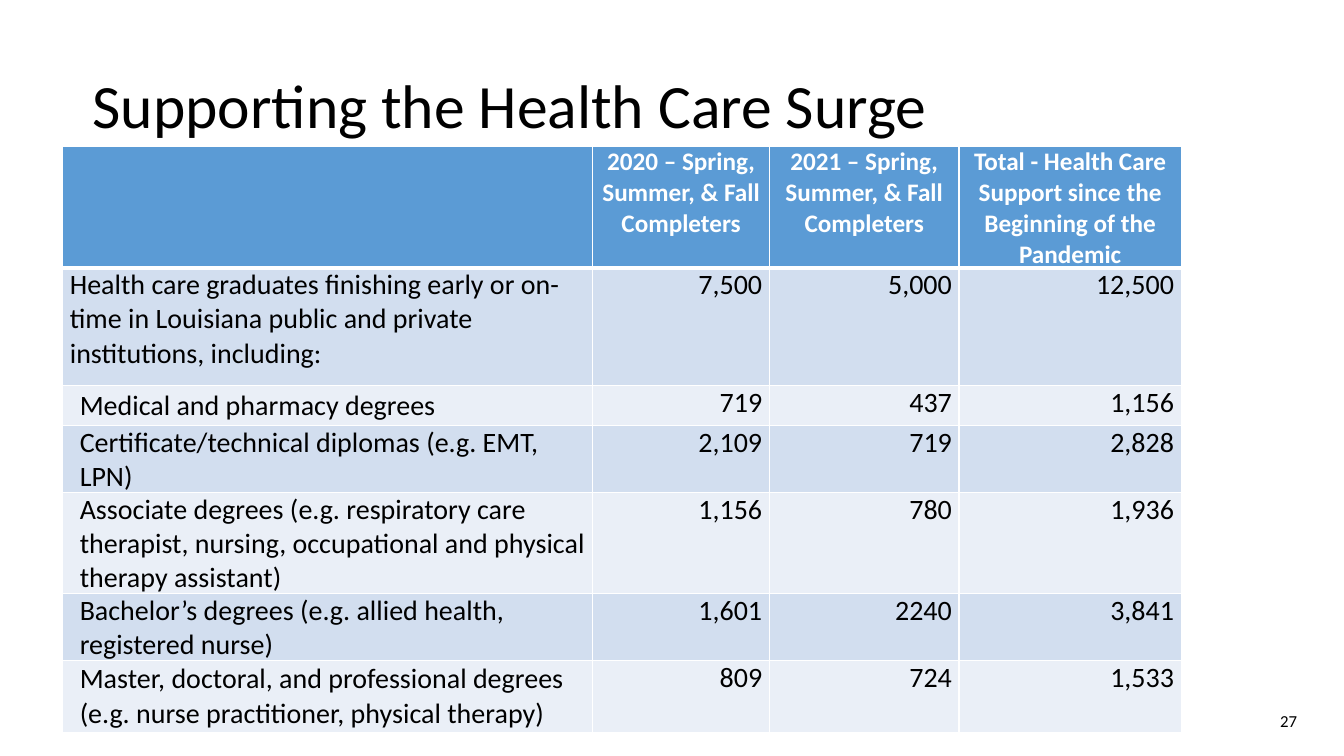
import pptx
import pptx.dml.color
import pptx.enum.text
import pptx.oxml
import pptx.oxml.ns
import pptx.util
from dataclasses import dataclass

Cm, Pt = pptx.util.Cm, pptx.util.Pt
ALIGN = pptx.enum.text.PP_ALIGN
ANCHOR = pptx.enum.text.MSO_ANCHOR


@dataclass(frozen=True)
class Theme:
    font: str = "Calibri"
    text: str = "000000"
    light: str = "FFFFFF"
    header: str = "5B9BD5"
    bands: tuple = ("D2DEEF", "EAEFF7")
    title_size: int = 44
    head_size: int = 18
    body_size: int = 20
    number_size: int = 12
    rule: int = 1
    head_rule: int = 3


def write(tf, text, *, font, size, color, bold=False, align=ALIGN.LEFT, spacing=None):
    p = tf.paragraphs[0]
    p.alignment = align
    p.line_spacing = spacing
    r = p.add_run()
    r.text = text
    r.font.name, r.font.size, r.font.bold = font, Pt(size), bold
    r.font.color.rgb = pptx.dml.color.RGBColor.from_string(color)
    return p


class Deck:
    def __init__(self, theme, width, height):
        self.theme = theme
        self.prs = pptx.Presentation()
        self.prs.slide_width, self.prs.slide_height = Cm(width), Cm(height)
        self.s = self.prs.slides.add_slide(self.prs.slide_layouts[5])

    def title(self, text, x, y, w, h):
        sp = self.s.shapes.title
        sp.left, sp.top, sp.width, sp.height = Cm(x), Cm(y), Cm(w), Cm(h)
        tf = sp.text_frame
        tf.auto_size = pptx.enum.text.MSO_AUTO_SIZE.NONE
        tf.vertical_anchor = ANCHOR.MIDDLE
        write(tf, text, font=self.theme.font, size=self.theme.title_size,
              color=self.theme.text, spacing=0.9)

    def page_number(self, text, x, y, w, h):
        tf = self.s.shapes.add_textbox(Cm(x), Cm(y), Cm(w), Cm(h)).text_frame
        tf.word_wrap = True
        tf.vertical_anchor = ANCHOR.MIDDLE
        write(tf, text, font=self.theme.font, size=self.theme.number_size,
              color=self.theme.text, align=ALIGN.RIGHT)

    def borders(self, cell, top, bottom):
        """Draw the four cell edges; this must run before the fill is set."""
        t = self.theme
        tc_pr = cell._tc.get_or_add_tcPr()
        for side, width in zip("LRTB", (t.rule, t.rule, top, bottom)):
            tc_pr.append(pptx.oxml.parse_xml(
                f'<a:ln{side} {pptx.oxml.ns.nsdecls("a")} w="{Pt(width)}">'
                f'<a:solidFill><a:srgbClr val="{t.light}"/></a:solidFill></a:ln{side}>'))

    def table(self, rows, x, y, widths, heights):
        t = self.theme
        table = self.s.shapes.add_table(len(rows), len(widths), Cm(x), Cm(y),
                                        Cm(sum(widths)), Cm(sum(heights))).table
        table.horz_banding = False
        for column, w in zip(table.columns, widths):
            column.width = Cm(w)
        for row, h in zip(table.rows, heights):
            row.height = Cm(h)
        for i, row in enumerate(rows):
            for j, text in enumerate(row):
                self.cell(table.cell(i, j), text, i, j)

    def cell(self, cell, text, i, j):
        t = self.theme
        head = i == 0
        sub_label = i > 1 and j == 0
        cell.margin_left = cell.margin_right = Cm(0.18)
        cell.margin_top = cell.margin_bottom = 0
        cell.vertical_anchor = ANCHOR.MIDDLE if sub_label else ANCHOR.TOP
        self.borders(cell, t.head_rule if i == 1 else t.rule,
                     t.head_rule if head else t.rule)
        cell.fill.solid()
        cell.fill.fore_color.rgb = pptx.dml.color.RGBColor.from_string(
            t.header if head else t.bands[(i - 1) % 2])
        if not text:
            return
        align = ALIGN.CENTER if head else ALIGN.RIGHT if j else ALIGN.LEFT
        p = write(cell.text_frame, text, font=t.font, bold=head, align=align,
                  size=t.head_size if head else t.body_size,
                  color=t.light if head else t.text)
        if sub_label:
            p._p.get_or_add_pPr().set("marL", str(Cm(0.25)))


ROWS = [
    ("", "2020 – Spring, Summer, & Fall Completers",
     "2021 – Spring, Summer, & Fall Completers",
     "Total - Health Care Support since the Beginning of the Pandemic"),
    ("Health care graduates finishing early or on-time in Louisiana public and "
     "private institutions, including:", "7,500", "5,000", "12,500"),
    ("Medical and pharmacy degrees", "719", "437", "1,156"),
    ("Certificate/technical diplomas (e.g. EMT, LPN)", "2,109", "719", "2,828"),
    ("Associate degrees (e.g. respiratory care therapist, nursing, occupational "
     "and physical therapy assistant)", "1,156", "780", "1,936"),
    ("Bachelor’s degrees (e.g. allied health, registered nurse)",
     "1,601", "2240", "3,841"),
    ("Master, doctoral, and professional degrees (e.g. nurse practitioner, "
     "physical therapy)", "809", "724", "1,533"),
]


def main():
    deck = Deck(Theme(), 33.87, 19.05)
    # Heading
    deck.title("Supporting the Health Care Surge", 2.08, 0.89, 29.21, 3.68)
    # Slide number
    deck.page_number("27", 25.32, 17.65, 7.62, 1.02)
    # Completers by degree level
    deck.table(ROWS, 1.58, 3.7, widths=(13.36, 4.45, 4.78, 5.6),
               heights=(2.97, 2.97, 1, 1.27, 2.24, 1.5, 1.8))
    deck.prs.save("out.pptx")


if __name__ == "__main__":
    main()
